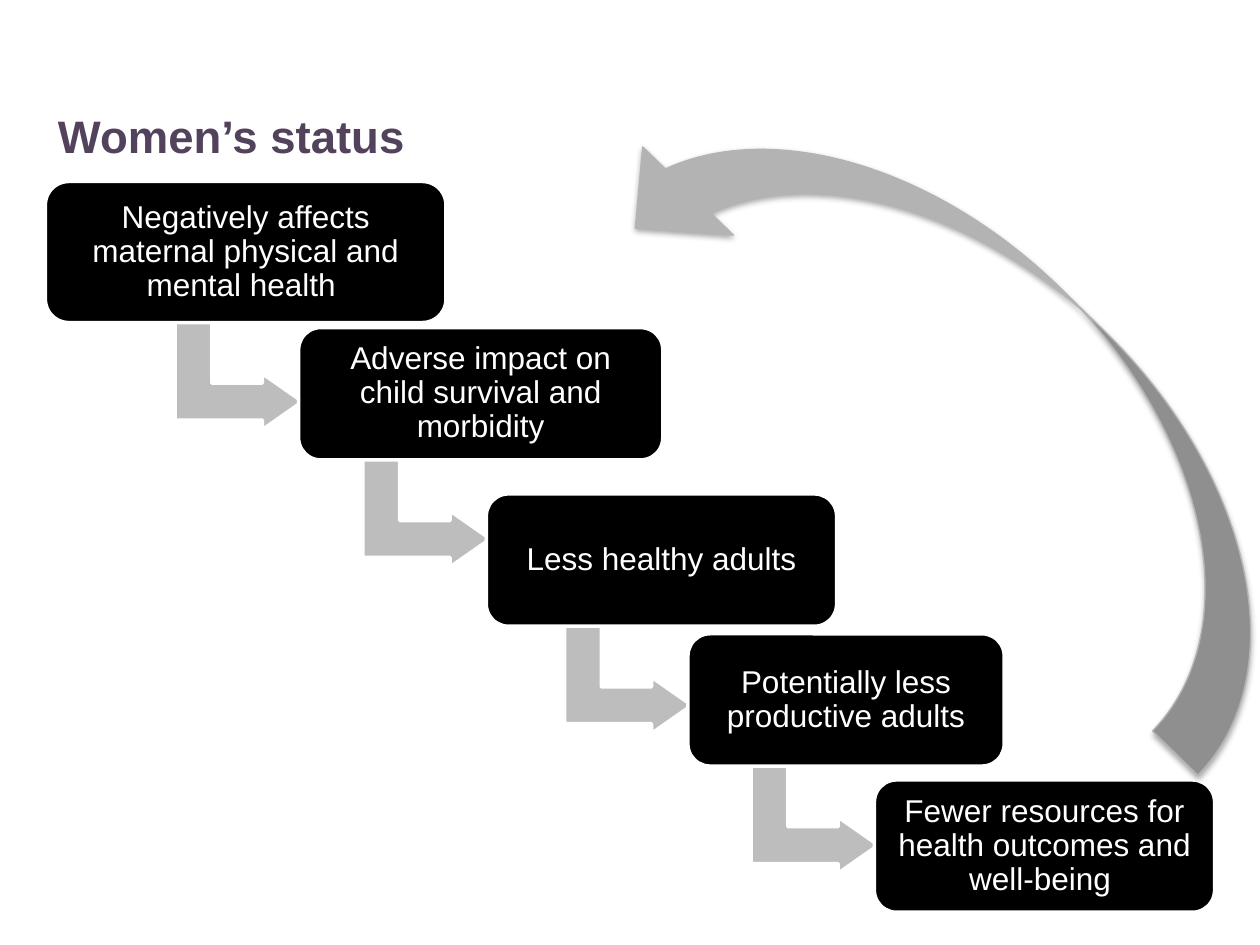
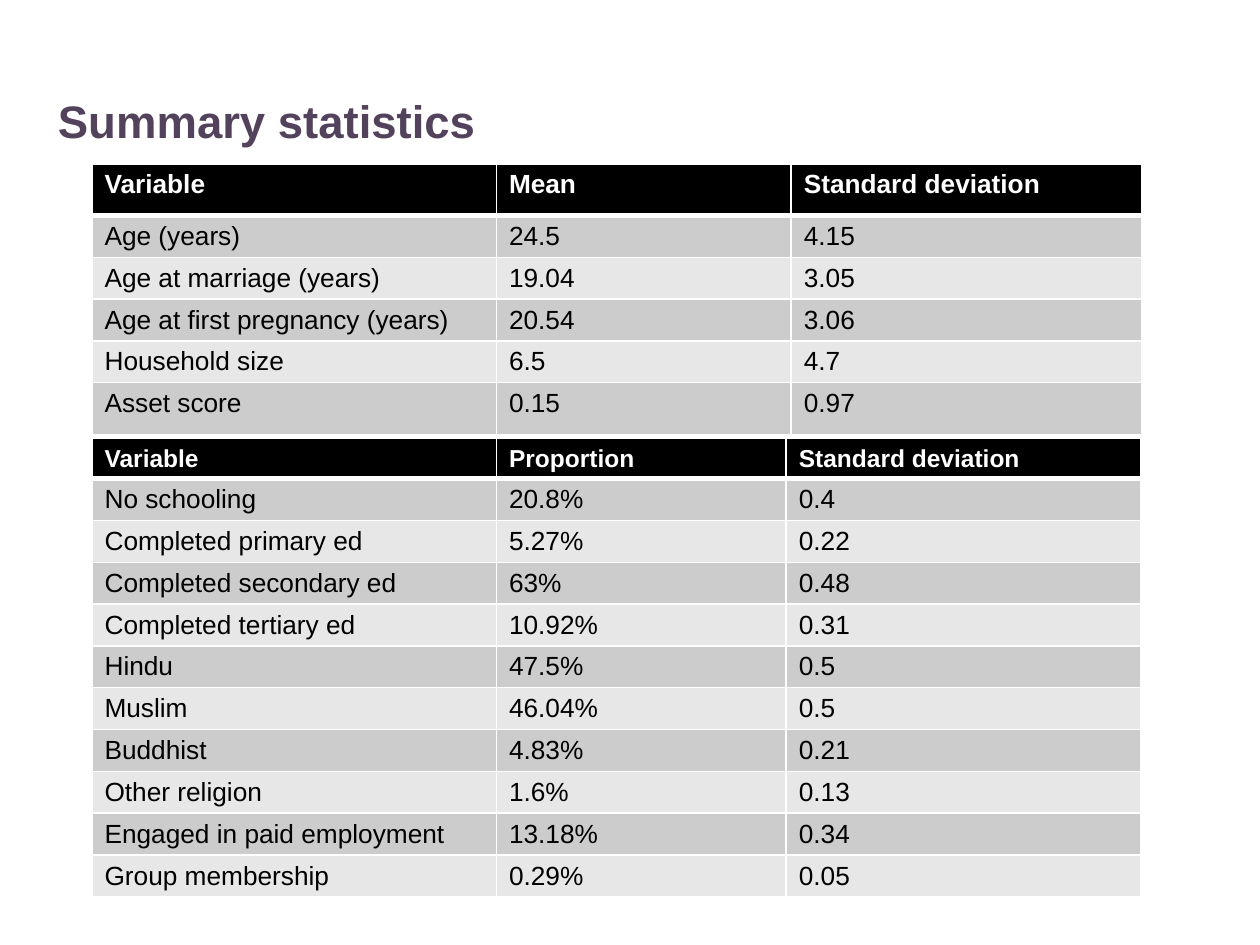
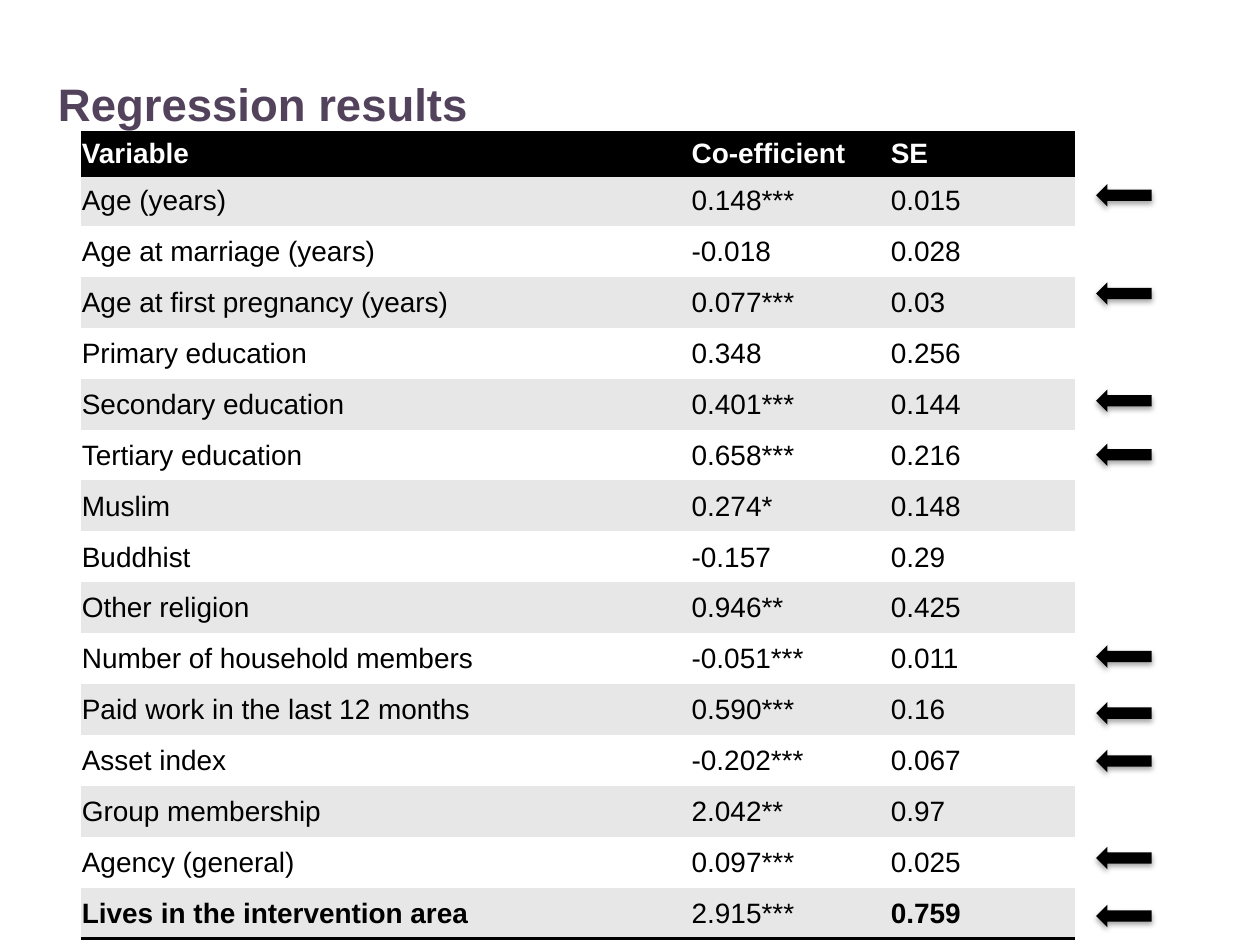
from lxml import etree
from pptx import Presentation
from pptx.dml.color import RGBColor
from pptx.enum.shapes import MSO_SHAPE
from pptx.enum.text import MSO_ANCHOR, PP_ALIGN
from pptx.oxml.ns import qn
from pptx.util import Inches, Pt

ROUND_BOX = MSO_SHAPE.ROUNDED_RECTANGLE
BENT_ARROW = MSO_SHAPE.BENT_UP_ARROW
CURVED_ARROW = MSO_SHAPE.CURVED_RIGHT_ARROW
LEFT_ARROW = MSO_SHAPE.LEFT_ARROW
TOP, MIDDLE = MSO_ANCHOR.TOP, MSO_ANCHOR.MIDDLE
LEFT, CENTER = PP_ALIGN.LEFT, PP_ALIGN.CENTER

FONT = "Arial"
BLACK, WHITE, PURPLE = "000000", "FFFFFF", "52425B"
STEP_GRAY, RETURN_GRAY = "BDBDBD", "B3B3B3"
DARK_BAND, LIGHT_BAND = "CCCCCC", "E7E7E7"
NO_TABLE_STYLE = "{2D5ABB26-0587-4C30-8999-92F81FD0307C}"
TITLE_ONLY = 5

# left, top, width, height, text
STEPS = [
    (0.36, 1.44, 3.18, 1.12, "Negatively affects maternal physical and mental health "),
    (2.37, 2.6, 2.89, 1.05, "Adverse impact on child survival and morbidity"),
    (3.86, 3.92, 2.78, 1.05, "Less healthy adults"),
    (5.46, 5.03, 2.51, 1.05, "Potentially less productive adults"),
    (6.94, 6.19, 2.7, 1.05, "Fewer resources for health outcomes and well-being "),
]

MEANS = [
    ("Variable", "Mean", "Standard deviation"),
    ("Age (years)", "24.5", "4.15"),
    ("Age at marriage (years)", "19.04", "3.05"),
    ("Age at first pregnancy (years)", "20.54", "3.06"),
    ("Household size", "6.5", "4.7"),
    ("Asset score", "0.15", "0.97"),
]

PROPORTIONS = [
    ("Variable", "Proportion", "Standard deviation"),
    ("No schooling", "20.8%", "0.4"),
    ("Completed primary ed", "5.27%", "0.22"),
    ("Completed secondary ed", "63%", "0.48"),
    ("Completed tertiary ed", "10.92%", "0.31"),
    ("Hindu", "47.5%", "0.5"),
    ("Muslim", "46.04%", "0.5"),
    ("Buddhist", "4.83%", "0.21"),
    ("Other religion", "1.6%", "0.13"),
    ("Engaged in paid employment", "13.18%", "0.34"),
    ("Group membership", "0.29%", "0.05"),
]

REGRESSION = [
    ("Variable", "Co-efficient", "SE"),
    ("Age (years)", "0.148***", "0.015"),
    ("Age at marriage (years)", "-0.018", "0.028"),
    ("Age at first pregnancy (years)", "0.077***", "0.03"),
    ("Primary education", "0.348", "0.256"),
    ("Secondary education", "0.401***", "0.144"),
    ("Tertiary education", "0.658***", "0.216"),
    ("Muslim", "0.274*", "0.148"),
    ("Buddhist", "-0.157", "0.29"),
    ("Other religion", "0.946**", "0.425"),
    ("Number of household members", "-0.051***", "0.011"),
    ("Paid work in the last 12 months", "0.590***", "0.16"),
    ("Asset index", "-0.202***", "0.067"),
    ("Group membership", "2.042**", "0.97"),
    ("Agency (general)", "0.097***", "0.025"),
    ("Lives in the intervention area", "2.915***", "0.759"),
]
MARKER_TOPS = [1.46, 2.24, 3.09, 3.52, 5.12, 5.57, 5.95, 6.72, 7.18]


def rgb(color):
    return RGBColor.from_string(color)


def set_attributes(target, values):
    for name, value in values.items():
        setattr(target, name, value)


def format_font(font, size, color, bold=False):
    set_attributes(font, {"name": FONT, "size": Pt(size), "bold": bold})
    font.color.rgb = rgb(color)


def set_margins(target, left, top, right, bottom):
    set_attributes(target, {
        "margin_left": Inches(left), "margin_top": Inches(top),
        "margin_right": Inches(right), "margin_bottom": Inches(bottom),
    })


def add_solid(parent, color):
    fill = etree.SubElement(parent, qn("a:solidFill"))
    return etree.SubElement(fill, qn("a:srgbClr"), val=color)


def add_drop_shadow(shape):
    effects = shape.element.spPr.find(qn("a:effectLst"))
    shadow = etree.SubElement(
        effects, qn("a:outerShdw"), blurRad=str(Pt(3.1)), dist=str(Pt(1.8)),
        dir="5400000", rotWithShape="0")
    etree.SubElement(add_color(shadow), qn("a:alpha"), val="35000")


def add_color(parent):
    return etree.SubElement(parent, qn("a:srgbClr"), val=BLACK)


def add_filled_shape(slide, kind, box, fill, line=None, line_width=0):
    shape = slide.shapes.add_shape(kind, *map(Inches, box))
    shape.shadow.inherit = False
    shape.fill.solid()
    shape.fill.fore_color.rgb = rgb(fill)
    if line:
        shape.line.color.rgb = rgb(line)
        shape.line.width = Pt(line_width)
    else:
        shape.line.fill.background()
    return shape


def add_titled_slide(presentation, title, top):
    slide = presentation.slides.add_slide(presentation.slide_layouts[TITLE_ONLY])
    shape = slide.shapes.title
    set_attributes(shape, {"left": Inches(0.36), "top": Inches(top),
                           "width": Inches(9.28), "height": Inches(1.42)})
    frame = shape.text_frame
    set_margins(frame, 0.1, 0.09, 0.1, 0.05)
    frame.vertical_anchor = TOP
    frame.text = title
    paragraph = frame.paragraphs[0]
    paragraph.alignment = LEFT
    format_font(paragraph.runs[0].font, 26, PURPLE, True)
    return slide


def add_step(slide, box, text):
    shape = add_filled_shape(slide, ROUND_BOX, box, BLACK, WHITE, 2)
    frame = shape.text_frame
    set_margins(frame, 0.07, 0.07, 0.07, 0.07)
    set_attributes(frame, {"word_wrap": True, "vertical_anchor": MIDDLE})
    frame.text = text
    paragraph = frame.paragraphs[0]
    set_attributes(paragraph, {"alignment": CENTER, "line_spacing": 0.9})
    format_font(paragraph.runs[0].font, 18, WHITE)


def add_step_arrow(slide, upper_bottom, lower_left):
    """Lead from the underside of one step to the left side of the next."""
    box = (lower_left - 0.92, upper_bottom - 0.1, 0.89, 1.01)
    arrow = add_filled_shape(slide, BENT_ARROW, box, STEP_GRAY, WHITE, 2)
    arrow.rotation = 90
    for index, value in enumerate((0.328, 0.25, 0.358)):
        arrow.adjustments[index] = value


def add_return_arrow(slide, box):
    arrow = add_filled_shape(slide, CURVED_ARROW, box, RETURN_GRAY, RETURN_GRAY, 0.75)
    arrow.rotation = 134.2
    add_drop_shadow(arrow)


def set_borders(cell, borders):
    """Draw the sides given as {side: (color, points)}; leave the others open."""
    properties = cell._tc.get_or_add_tcPr()
    for side in "LRTB":
        color, width = borders.get(side, (None, 0))
        line = etree.SubElement(properties, qn(f"a:ln{side}"), w=str(Pt(width)))
        if color:
            add_solid(line, color)
        else:
            etree.SubElement(line, qn("a:noFill"))


def grid_borders(row, last_row):
    borders = dict.fromkeys("LRTB", (WHITE, 1))
    if row < 2:
        borders["B" if row == 0 else "T"] = (WHITE, 3)
    return borders


def ruled_borders(row, last_row):
    rule = (BLACK, 2)
    if row == 0:
        return {"T": rule, "B": rule}
    if row == 1:
        return {"T": rule}
    return {"B": rule} if row == last_row else {}


def add_data_table(slide, left, top, widths, heights, rows, bands, borders,
                   header_size, body_size, margins=(0.1, 0.05, 0.1, 0.05),
                   anchor=TOP, bold_cells=()):
    frame = slide.shapes.add_table(
        len(rows), len(widths), Inches(left), Inches(top),
        Inches(sum(widths)), Inches(sum(heights)))
    for style in frame.element.iter(qn("a:tableStyleId")):
        style.text = NO_TABLE_STYLE
    table = frame.table
    for column, width in zip(table.columns, widths):
        column.width = Inches(width)
    for index, (values, height) in enumerate(zip(rows, heights)):
        table.rows[index].height = Inches(height)
        header = index == 0
        for position, value in enumerate(values):
            cell = table.cell(index, position)
            set_borders(cell, borders(index, len(rows) - 1))
            cell.fill.solid()
            cell.fill.fore_color.rgb = rgb(BLACK if header else bands[(index - 1) % 2])
            set_margins(cell, *margins)
            cell.vertical_anchor = anchor
            cell.text = value
            format_font(cell.text_frame.paragraphs[0].runs[0].font,
                        header_size if header else body_size,
                        WHITE if header else BLACK,
                        header or (index, position) in bold_cells)


def build_status_slide(presentation):
    slide = add_titled_slide(presentation, "Women’s status", 0.77)
    for upper, lower in zip(STEPS, STEPS[1:]):
        add_step_arrow(slide, upper[1] + upper[3], lower[0])
    for *box, text in STEPS:
        add_step(slide, box, text)
    add_return_arrow(slide, (6.79, -0.28, 2.01, 6.73))


def build_summary_slide(presentation):
    slide = add_titled_slide(presentation, "Summary statistics", 0.65)
    bands = (DARK_BAND, LIGHT_BAND)
    add_data_table(slide, 0.73, 1.3, (3.21, 2.34, 2.78), [0.41] + [0.33] * 4 + [0.41],
                   MEANS, bands, grid_borders, 15, 15)
    add_data_table(slide, 0.73, 3.48, (3.21, 2.3, 2.81), [0.31] + [0.33] * 10,
                   PROPORTIONS, bands, grid_borders, 14, 15)


def build_regression_slide(presentation):
    slide = add_titled_slide(presentation, "Regression results", 0.51)
    header_height, body_count = 0.34, len(REGRESSION) - 1
    body_height = (6.4 - header_height) / body_count
    add_data_table(slide, 0.64, 1.05, (4.84, 1.58, 1.47),
                   [header_height] + [body_height] * body_count,
                   REGRESSION, (LIGHT_BAND, WHITE), ruled_borders, 16, 16,
                   margins=(0.01, 0.01, 0.01, 0), anchor=MIDDLE,
                   bold_cells={(body_count, 0), (body_count, 2)})
    for top in MARKER_TOPS:
        add_drop_shadow(add_filled_shape(slide, LEFT_ARROW, (8.7, top, 0.44, 0.18), BLACK))


def main():
    presentation = Presentation()
    presentation.slide_width = Inches(10)
    presentation.slide_height = Inches(7.5)
    build_status_slide(presentation)
    build_summary_slide(presentation)
    build_regression_slide(presentation)
    presentation.save("out.pptx")


if __name__ == "__main__":
    main()
